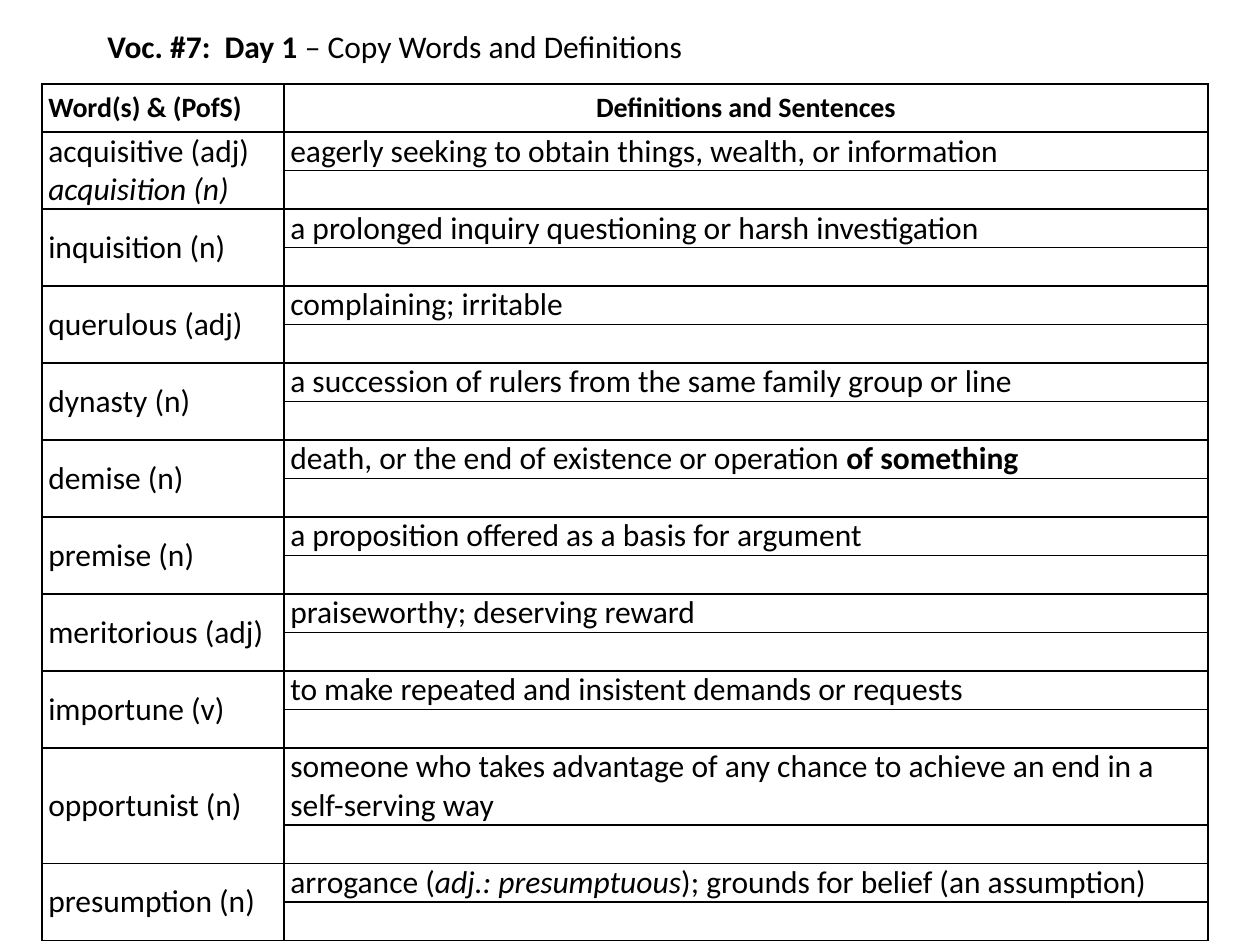
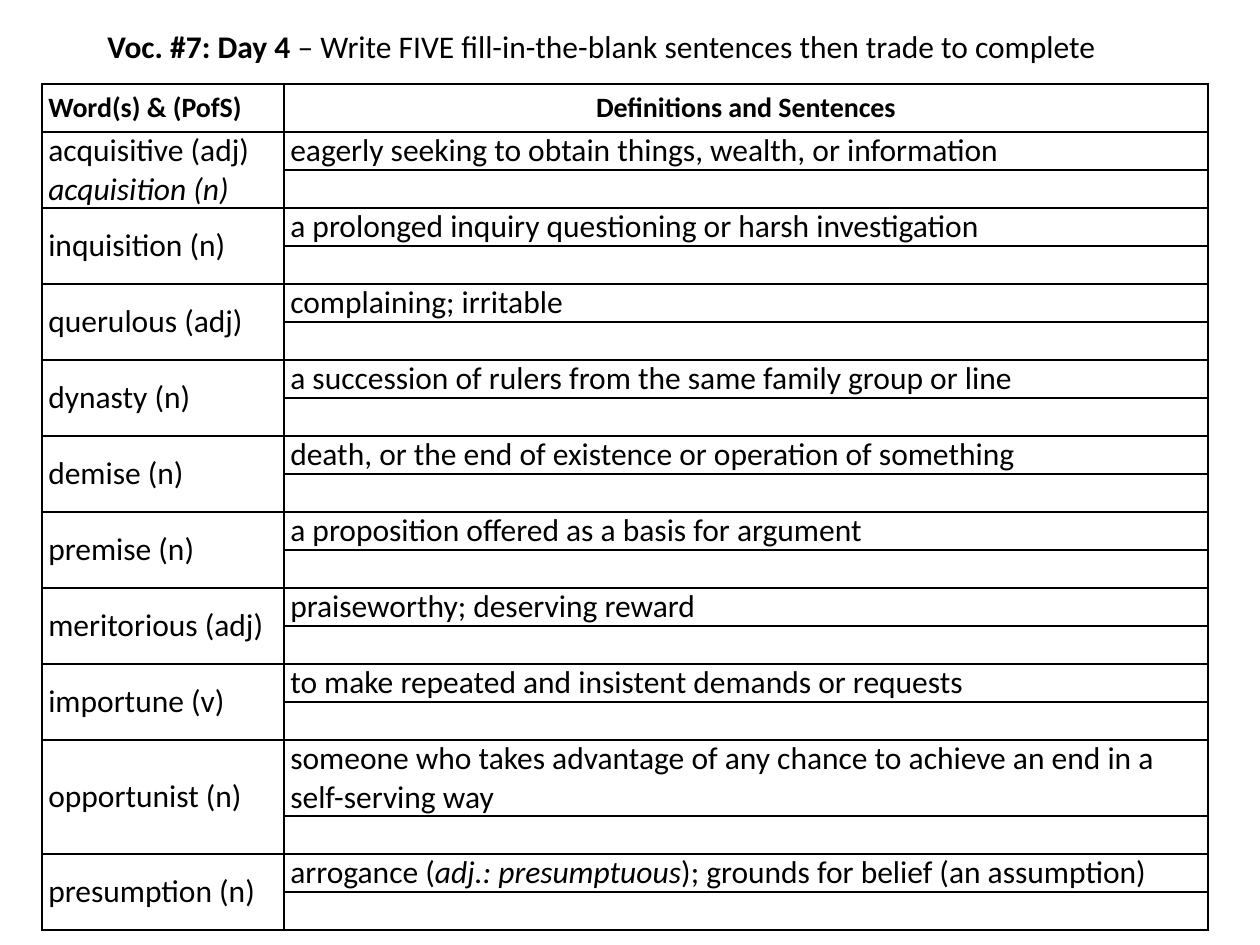
from lxml import etree
from pptx import Presentation
from pptx import util as u
from pptx.dml.color import RGBColor
from pptx.enum import text
from pptx.oxml import ns

PX_PER_INCH = 126
LINE = 38
HEADER = 48
COLUMNS = (242, 924)


def px(n):
    return u.Emu(round(n * 914400 / PX_PER_INCH))


def color(value):
    return RGBColor.from_string(value)


class Deck:
    font = "Calibri"
    ink = "000000"
    paper = "FFFFFF"

    def __init__(self):
        self.prs = Presentation()
        self.prs.slide_width = px(1260)
        self.prs.slide_height = px(945)
        self.s = None

    def slide(self):
        self.s = self.prs.slides.add_slide(self.prs.slide_layouts[6])
        fill = self.s.background.fill
        fill.solid()
        fill.fore_color.rgb = color(self.paper)

    def runs(self, p, parts, size=18):
        for words, style in parts:
            r = p.add_run()
            r.text = words
            r.font.name = self.font
            r.font.size = u.Pt(size)
            r.font.color.rgb = color(self.ink)
            r.font.bold = "b" in style
            r.font.italic = "i" in style

    def title(self, width, parts):
        sp = self.s.shapes.add_textbox(px(32), px(21), px(width), px(50))
        tf = sp.text_frame
        tf.word_wrap = False
        tf.auto_size = text.MSO_AUTO_SIZE.SHAPE_TO_FIT_TEXT
        tf.vertical_anchor = text.MSO_ANCHOR.MIDDLE
        p = tf.paragraphs[0]
        p._p.get_or_add_pPr().set("indent", str(u.Inches(0.5)))
        self.runs(p, parts)

    def border(self, cell):
        tcPr = cell._tc.get_or_add_tcPr()
        for side in ("lnL", "lnR", "lnT", "lnB"):
            ln = etree.SubElement(tcPr, ns.qn(f"a:{side}"), w=str(u.Pt(1)))
            solid = etree.SubElement(ln, ns.qn("a:solidFill"))
            etree.SubElement(solid, ns.qn("a:srgbClr"), val=self.ink)

    def table(self, heights):
        frame = self.s.shapes.add_table(
            len(heights), len(COLUMNS), px(42), px(84),
            px(sum(COLUMNS)), px(sum(heights)))
        table = frame.table
        table.first_row = False
        table.horz_banding = False
        for column, width in zip(table.columns, COLUMNS):
            column.width = px(width)
        for row, height in zip(table.rows, heights):
            row.height = px(height)
        for cell in table.iter_cells():
            cell.margin_left = cell.margin_right = u.Inches(0.05)
            cell.margin_top = cell.margin_bottom = 0
            cell.vertical_anchor = text.MSO_ANCHOR.MIDDLE
            self.border(cell)
            cell.fill.background()
        return table

    def cell(self, cell, lines, size=18, align=None):
        tf = cell.text_frame
        for i, parts in enumerate(lines):
            p = tf.add_paragraph() if i else tf.paragraphs[0]
            p.alignment = align
            self.runs(p, parts, size)

    def vocabulary(self, entries):
        heights = [HEADER]
        for _, _, line_count in entries:
            heights += [LINE * line_count, LINE]
        table = self.table(heights)
        self.cell(table.cell(0, 0), [[("Word(s) & (PofS)", "b")]], 16)
        self.cell(table.cell(0, 1), [[("Definitions and Sentences", "b")]], 16,
                  text.PP_ALIGN.CENTER)
        for i, (word, definition, _) in enumerate(entries):
            top = 1 + 2 * i
            table.cell(top, 0).merge(table.cell(top + 1, 0))
            self.cell(table.cell(top, 0), word)
            self.cell(table.cell(top, 1), [definition])


def entry(word, definition, line_count=1):
    return [[(word, "")]], [(definition, "")], line_count


def entries(demise):
    return [
        ([[("acquisitive (adj)", "")], [("acquisition (n)", "i")]],
         [("eagerly seeking to obtain things, wealth, or information", "")], 1),
        entry("inquisition (n)",
              "a prolonged inquiry questioning or harsh investigation"),
        entry("querulous (adj)", "complaining; irritable"),
        entry("dynasty (n)",
              "a succession of rulers from the same family group or line"),
        ([[("demise (n)", "")]], demise, 1),
        entry("premise (n)", "a proposition offered as a basis for argument"),
        entry("meritorious (adj)", "praiseworthy; deserving reward"),
        entry("importune (v)",
              "to make repeated and insistent demands or requests"),
        entry("opportunist (n)",
              "someone who takes advantage of any chance to achieve an end "
              "in a self-serving way", 2),
        ([[("presumption (n)", "")]],
         [("arrogance (", ""), ("adj.: presumptuous", "i"),
          ("); grounds for belief (an assumption)", "")], 1),
    ]


DAYS = [
    (672, "Voc. #7:  Day 1 ", "– Copy Words and Definitions",
     [("death, or the end of existence or operation ", ""),
      ("of something", "b")]),
    (1089, "Voc. #7: Day 4 ",
     "– Write FIVE fill-in-the-blank sentences then trade to complete",
     [("death, or the end of existence or operation of something", "")]),
]


def main():
    deck = Deck()
    for width, day, task, demise in DAYS:
        deck.slide()
        deck.vocabulary(entries(demise))
        deck.title(width, [(day, "b"), (task, "")])
    deck.prs.save("out.pptx")


if __name__ == "__main__":
    main()
